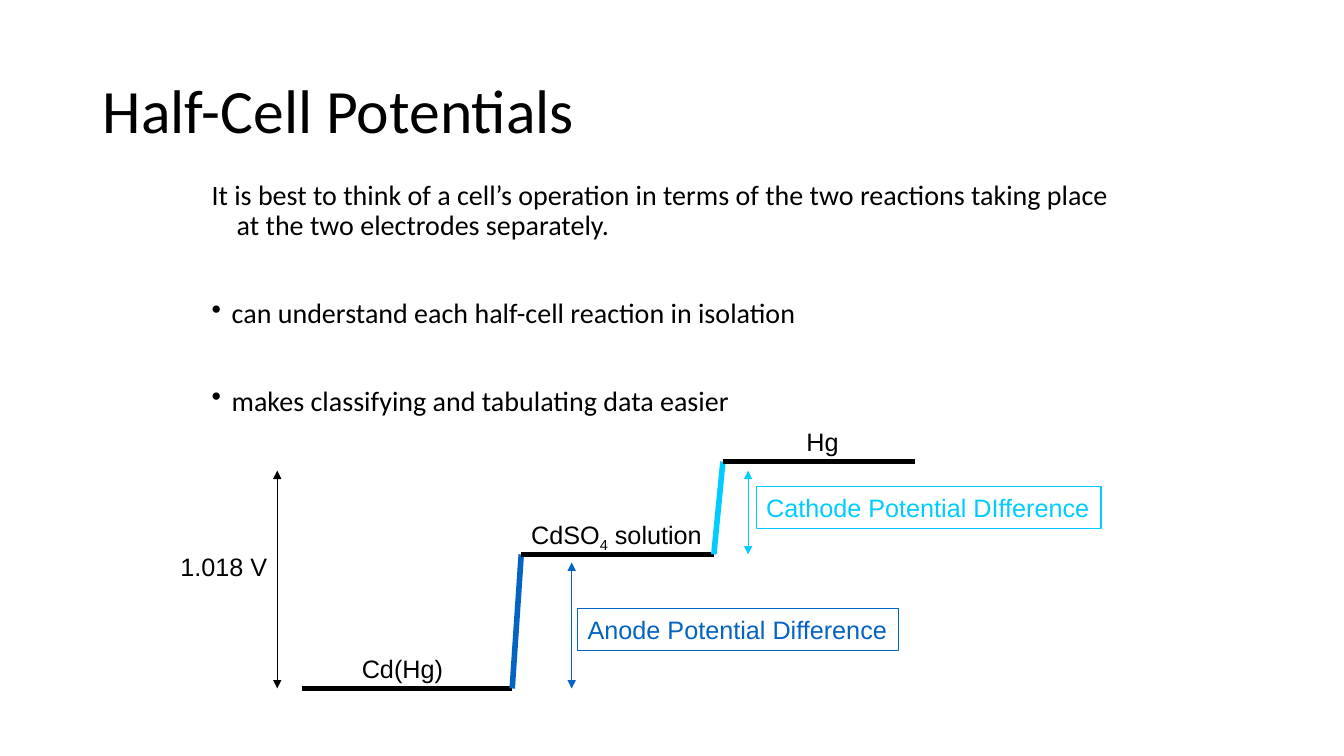
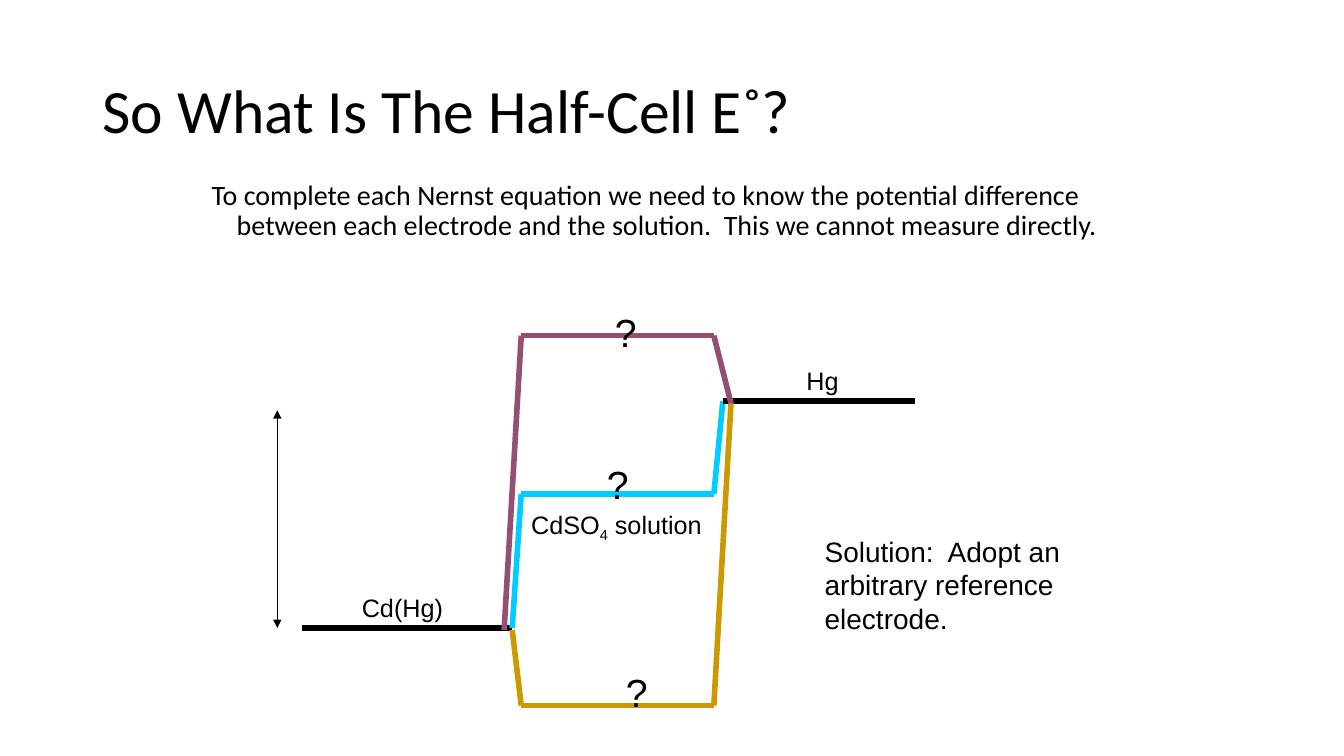
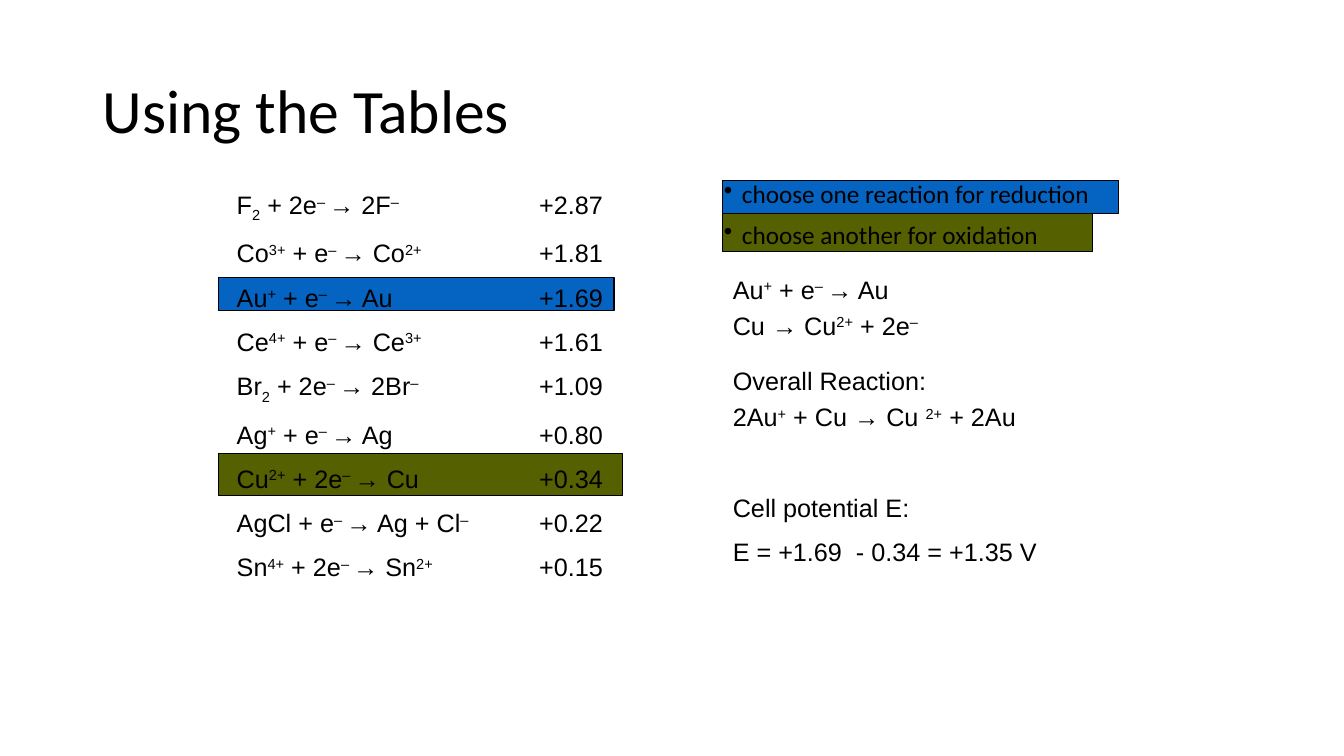
"""Build three slides on half-cell potentials and electrode tables."""
from lxml.etree import SubElement
from pptx import Presentation
from pptx.dml.color import RGBColor
from pptx.enum.shapes import MSO_CONNECTOR, MSO_SHAPE
from pptx.enum.text import MSO_ANCHOR
from pptx.oxml.ns import qn
from pptx.util import Inches, Pt


class Theme:
    BLACK = RGBColor.from_string("000000")
    BLUE = RGBColor.from_string("0563C1")
    CYAN = RGBColor.from_string("00CCFF")
    GOLD = RGBColor.from_string("CC9900")
    PLUM = RGBColor.from_string("954F72")
    OLIVE = RGBColor.from_string("556000")
    HEADING_FONT = "Calibri"
    DIAGRAM_FONT = "Arial"
    TITLE, MARK, BODY, LABEL = 44, 28, 20, 18
    THICK, THIN = 4, 0.75
    TIGHT = 0.9


LABEL_HEIGHT = 0.4
LADDER = [(3, 6.83), (5.08, 6.83), (5.17, 5.5), (7.08, 5.5), (7.17, 4.58), (9.08, 4.58)]
LADDER_SHIFT = -0.6
ELECTRODES = [("Cd(Hg)", 3.49, 6.43, 1.01), ("Hg", 7.9, 4.18, 0.52)]
SOLUTION = ("CdSO|_4| solution", 5.17, 1.9)
VOLTAGE_SPAN = (2.75, 6.83, 4.67)

SEPARATE_INTRO = ("It is best to think of a cell’s operation in terms of the two "
                  "reactions taking place at the two electrodes separately.")
SEPARATE_POINTS = ["can understand each half-cell reaction in isolation",
                   "makes classifying and tabulating data easier"]
DIFFERENCES = [
    ("Anode Potential Difference", Theme.BLUE, (5.67, 6.83, 5.58), (5.73, 6.04, 3.18, 0.41)),
    ("Cathode Potential DIfference", Theme.CYAN, (7.42, 5.5, 4.67), (7.5, 4.83, 3.42, 0.41)),
]

UNKNOWN_INTRO = ("To complete each Nernst equation we need to know the potential difference "
                 "between each electrode and the solution.  This we cannot measure directly.")
ALTERNATIVES = [
    (Theme.GOLD, [(5.08, 6.25), (5.17, 7), (7.08, 7), (7.25, 4)]),
    (Theme.PLUM, [(5, 6.25), (5.17, 3.33), (7.08, 3.33), (7.25, 4)]),
]
QUESTION_MARKS = [(6.11, 6.58), (6, 3.01), (5.92, 4.52)]
ANSWER = "Solution:  Adopt an arbitrary reference electrode."

POTENTIALS = [
    ("F|_2| + 2e|^– |→ 2F|^–", "+2.87"),
    ("Co|^3+| + e|^– |→ Co|^2+", "+1.81"),
    ("Au|^+| + e|^– |→ Au", "+1.69"),
    ("Ce|^4+| + e|^– |→ Ce|^3+", "+1.61"),
    ("Br|_2| + 2e|^– |→ 2Br|^–", "+1.09"),
    ("Ag|^+| + e|^– |→ Ag", "+0.80"),
    ("Cu|^2+| + 2e|^– |→ Cu", "+0.34"),
    ("AgCl + e|^– |→ Ag + Cl|^–", "+0.22"),
    ("Sn|^4+| + 2e|^– |→ Sn|^2+", "+0.15"),
]
BANDS = [
    (Theme.OLIVE, (2.17, 4.5, 4, 0.42)),
    (Theme.OLIVE, (7.17, 2.08, 3.67, 0.42)),
    (Theme.BLUE, (7.17, 1.79, 3.92, 0.33)),
    (Theme.BLUE, (2.17, 2.75, 3.92, 0.33)),
]
CHOICES = ["choose one reaction for reduction", "choose another for oxidation"]
WORKINGS = [
    ((7.17, 2.67, 3.83, 0.76), 4, ["Au|^+| + e|^– |→ Au", "Cu → Cu|^2+| + 2e|^–"]),
    ((7.17, 3.58, 4.25, 0.76), 4, ["Overall Reaction:", "2Au|^+| + Cu → Cu |^2+| + 2Au"]),
    ((7.17, 4.83, 3.67, 0.85), 10, ["Cell potential E:", "E = +1.69  - 0.34 = +1.35 V"]),
]


def add_spans(para, text):
    """Add runs split at bars; a leading ^ raises a run and _ lowers it."""
    for part in text.split("|"):
        span = para.add_run()
        span.text = part.lstrip("^_")
        if part[:1] in ("^", "_"):
            shift = "30000" if part[0] == "^" else "-25000"
            span.font._element.set("baseline", shift)


def add_text(page, place, lines, size=Theme.LABEL, font=Theme.DIAGRAM_FONT,
             color=Theme.BLACK, gap=0, wrap=True, spacing=None, tab=None):
    """Place a text box; a line is a string or a (text, style) pair."""
    box = page.shapes.add_textbox(*map(Inches, place))
    frame = box.text_frame
    frame.word_wrap = wrap
    for index, line in enumerate(lines):
        text, style = (line, None) if isinstance(line, str) else line
        para = frame.paragraphs[0] if index == 0 else frame.add_paragraph()
        add_spans(para, text)
        if index and gap:
            para.space_before = Pt(gap)
        if spacing:
            para.line_spacing = spacing
        props = para._p.get_or_add_pPr()
        if style:
            indent = Inches(0.25 if style == "hanging" else size / 100)
            props.set("marL", str(indent))
            props.set("indent", str(-indent))
        if style == "bullet":
            SubElement(props, qn("a:buChar")).set("char", "•")
        if tab:
            stop = SubElement(SubElement(props, qn("a:tabLst")), qn("a:tab"))
            stop.set("pos", str(Inches(tab)))
            stop.set("algn", "l")
        para.font.size = Pt(size)
        para.font.name = font
        para.font.color.rgb = color
    return box


def add_body(page, place, lines, size=Theme.BODY, gap=10):
    add_text(page, place, lines, size, Theme.HEADING_FONT, gap=gap, spacing=Theme.TIGHT)


def add_line(page, start, end, color, width):
    line = page.shapes.add_connector(MSO_CONNECTOR.STRAIGHT, *map(Inches, start + end))
    line.line.color.rgb = color
    line.line.width = Pt(width)
    SubElement(line._element.spPr, qn("a:effectLst"))
    return line


def add_path(page, points, colors):
    for start, end, color in zip(points, points[1:], colors):
        add_line(page, start, end, color, Theme.THICK)


def add_span_arrow(page, left, bottom, top, color):
    arrow = add_line(page, (left, bottom), (left, top), color, Theme.THIN)
    outline = arrow.line._get_or_add_ln()
    for end in ("a:headEnd", "a:tailEnd"):
        SubElement(outline, qn(end)).set("type", "triangle")


def add_ladder(page, colors, solution_top, shift=0):
    """Draw the electrode levels, their labels and the voltage arrow."""
    add_path(page, [(x, y + shift) for x, y in LADDER], colors)
    for text, left, top, width in ELECTRODES:
        add_text(page, (left, top + shift, width, LABEL_HEIGHT), [text], wrap=False)
    text, left, width = SOLUTION
    add_text(page, (left, solution_top, width, LABEL_HEIGHT), [text], wrap=False)
    left, bottom, top = VOLTAGE_SPAN
    add_span_arrow(page, left, bottom + shift, top + shift, Theme.BLACK)


def add_page(deck, title):
    page = deck.slides.add_slide(deck.slide_layouts[6])
    box = add_text(page, (0.92, 0.4, 11.5, 1.45), [title], Theme.TITLE,
                   Theme.HEADING_FONT, spacing=Theme.TIGHT)
    box.text_frame.vertical_anchor = MSO_ANCHOR.MIDDLE
    return page


def build_half_cells(deck):
    page = add_page(deck, "Half-Cell Potentials")
    points = [(text, "bullet") for text in SEPARATE_POINTS]
    add_body(page, (2, 1.75, 9.34, 2.75), [(SEPARATE_INTRO, "hanging")] + points, gap=41)
    black = Theme.BLACK
    add_ladder(page, [black, Theme.BLUE, black, Theme.CYAN, black], 5.1)
    add_text(page, (1.69, 5.42, 1.06, LABEL_HEIGHT), ["1.018 V"], wrap=False)
    for text, color, arrow, place in DIFFERENCES:
        add_span_arrow(page, *arrow, color)
        box = add_text(page, place, [text], color=color, wrap=False)
        box.line.color.rgb = color
        box.line.width = Pt(Theme.THIN)


def build_unknown(deck):
    page = add_page(deck, "So What Is The Half-Cell E˚?")
    add_body(page, (2, 1.75, 9.34, 1.25), [(UNKNOWN_INTRO, "hanging")])
    colors = [Theme.BLACK] + [Theme.CYAN] * 3 + [Theme.BLACK]
    add_ladder(page, colors, 5, LADDER_SHIFT)
    for color, points in ALTERNATIVES:
        add_path(page, points, [color] * 3)
    for left, top in QUESTION_MARKS:
        add_text(page, (left, top, 0.41, 0.57), ["?"], Theme.MARK, wrap=False)
    add_text(page, (8.08, 5.25, 2.92, 1.1), [ANSWER], Theme.BODY)


def build_tables(deck):
    page = add_page(deck, "Using the Tables")
    for color, place in BANDS:
        band = page.shapes.add_shape(MSO_SHAPE.RECTANGLE, *map(Inches, place))
        band.shadow.inherit = False
        band.fill.solid()
        band.fill.fore_color.rgb = color
        band.line.color.rgb = Theme.BLACK
        band.line.width = Pt(Theme.THIN)
    choices = [(text, "bullet") for text in CHOICES]
    add_body(page, (7.08, 1.75, 4.25, 0.83), choices, Theme.LABEL)
    rows = [f"{reaction}|\t{volts}" for reaction, volts in POTENTIALS]
    add_text(page, (2.25, 1.83, 4.17, 4.01), rows, gap=10, tab=3)
    for place, gap, lines in WORKINGS:
        add_text(page, place, lines, gap=gap)


def main():
    deck = Presentation()
    deck.slide_width, deck.slide_height = Inches(13.33), Inches(7.5)
    build_half_cells(deck)
    build_unknown(deck)
    build_tables(deck)
    deck.save("out.pptx")


if __name__ == "__main__":
    main()
